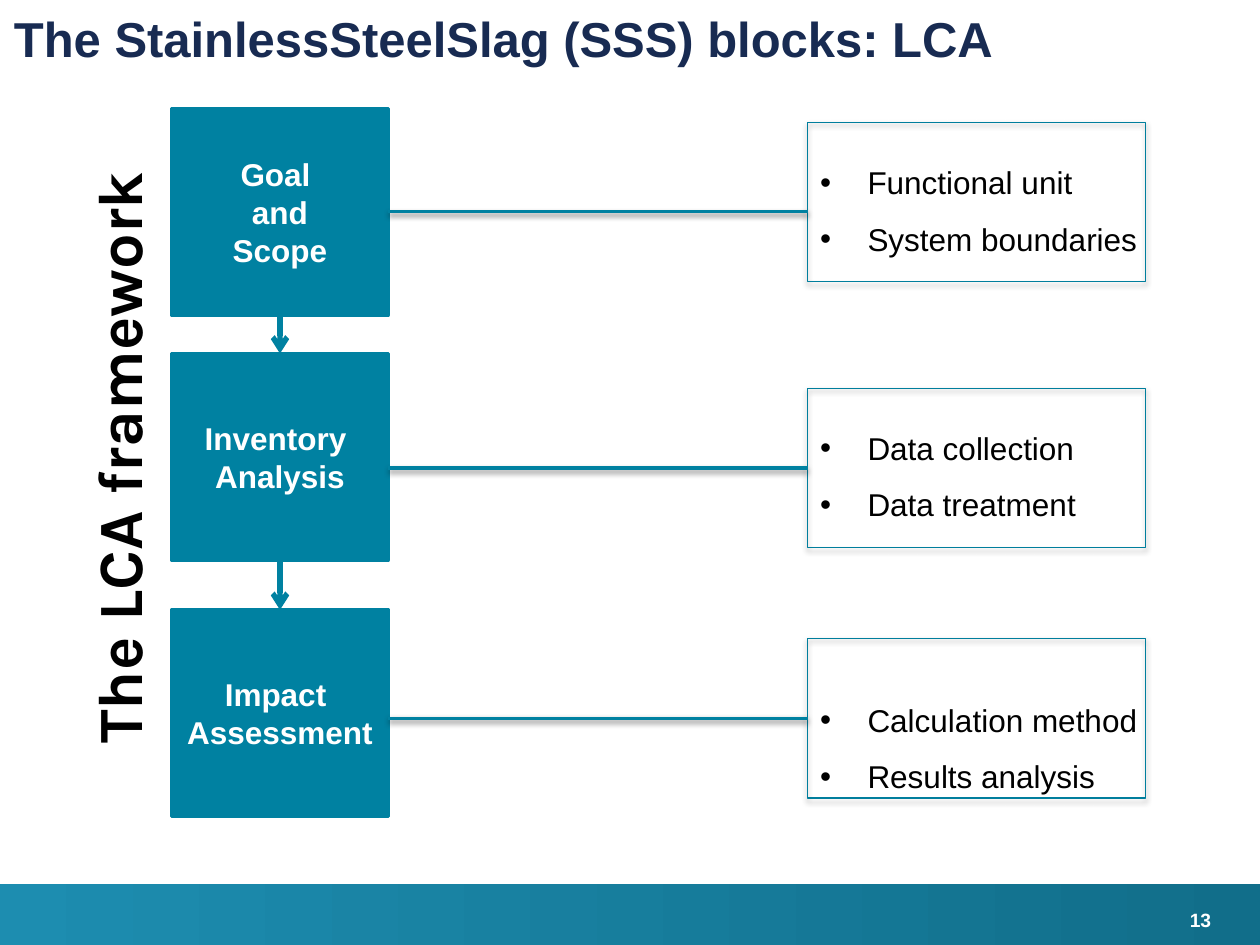
"""Build the slide on the LCA framework for SSS blocks."""
from lxml import etree
from pptx import Presentation
from pptx.dml.color import RGBColor
from pptx.enum import shapes, text
from pptx.oxml import ns
from pptx.util import Pt

TEAL = RGBColor(0x00, 0x81, 0xA1)
EDGE = RGBColor(0x00, 0x7E, 0x9D)
NAVY = RGBColor(0x18, 0x2B, 0x52)
BLACK = RGBColor(0, 0, 0)
WHITE = RGBColor(255, 255, 255)
LIGHT = RGBColor(0x1D, 0x8D, 0xB0)
DARK = RGBColor(0x11, 0x6E, 0x8A)

LEFT, SIDE, TALL = 98, 124, 118
EAST, WIDE, HIGH = 461.5, 193, 91
STEPS = [
    (62, 70, 79, 121, ["Goal ", "and", "Scope"],
     ["Functional unit", "System boundaries"]),
    (202, 222, 230.5, 267.5, ["Inventory ", "Analysis"],
     ["Data collection", "Data treatment"]),
    (348.5, 365, 386, 410.5, ["Impact ", "Assessment"],
     ["Calculation method", "Results analysis"]),
]


def add(parent, tag, **attrs):
    node = etree.SubElement(parent, ns.qn(tag))
    for key, value in attrs.items():
        node.set(key, str(value))
    return node


class Deck:
    def __init__(self, slide, face="Arial"):
        self.slide = slide
        self.face = face

    def place(self, shape, left, top, width, height):
        shape.left, shape.top = Pt(left), Pt(top)
        shape.width, shape.height = Pt(width), Pt(height)

    def letter(self, shape, lines, size, color, bold=True, align=None,
               face=None, bullet=False):
        frame = shape.text_frame
        frame.word_wrap = True
        frame.text = "\n".join(lines)
        for para in frame.paragraphs:
            if bullet:
                props = para._p.get_or_add_pPr()
                props.set("marL", str(Pt(27)))
                props.set("indent", str(Pt(-27)))
                add(props, "a:buFont", typeface="Arial")
                add(props, "a:buChar", char="•")
                para.line_spacing = 1.5
                para.space_before = Pt(0)
            para.alignment = align
            font = para.font
            font.name, font.size, font.bold = face or self.face, Pt(size), bold
            font.color.rgb = color
        return frame

    def title(self, line):
        shape = self.slide.shapes.title
        self.place(shape, 0, 0, 695, 43)
        frame = self.letter(shape, [line], 28, NAVY, align=text.PP_ALIGN.LEFT)
        frame.auto_size = text.MSO_AUTO_SIZE.NONE
        frame.vertical_anchor = text.MSO_ANCHOR.MIDDLE
        frame.margin_left, frame.margin_right = Pt(8), 0

    def points(self, shape, top, lines):
        self.place(shape, EAST, top, 211, 69)
        frame = self.letter(shape, lines, 18, BLACK, bold=False, bullet=True,
                            align=text.PP_ALIGN.LEFT)
        frame.auto_size = text.MSO_AUTO_SIZE.NONE
        frame.vertical_anchor = text.MSO_ANCHOR.TOP

    def label(self, line, area, size, color, face=None, turn=0):
        box = self.slide.shapes.add_textbox(*map(Pt, area))
        box.rotation = turn
        return self.letter(box, [line], size, color, face=face,
                           align=text.PP_ALIGN.CENTER)

    def rect(self, left, top, width, height):
        shape = self.slide.shapes.add_shape(
            shapes.MSO_SHAPE.RECTANGLE, *map(Pt, (left, top, width, height)))
        shape.shadow.inherit = False
        return shape

    def band(self):
        shape = self.rect(0, 505, 720, 35)
        shape.line.fill.background()
        shape.fill.gradient()
        shape.fill.gradient_angle = 0
        for stop, color in zip(shape.fill.gradient_stops, (LIGHT, DARK)):
            stop.color.rgb = color

    def block(self, top, lines):
        shape = self.rect(LEFT, top, SIDE, TALL)
        shape.fill.solid()
        shape.fill.fore_color.rgb = TEAL
        shape.line.color.rgb, shape.line.width = TEAL, Pt(2)
        frame = self.letter(shape, lines, 18, WHITE, align=text.PP_ALIGN.CENTER)
        frame.vertical_anchor = text.MSO_ANCHOR.MIDDLE
        return shape

    def frame(self, top):
        shape = self.rect(EAST, top, WIDE, HIGH)
        shape.fill.background()
        shape.line.color.rgb, shape.line.width = EDGE, Pt(0.75)
        self.shade(shape.element.spPr.find(ns.qn("a:effectLst")), 1.8, 35)
        return shape

    def shade(self, effects, dist, alpha):
        glow = add(effects, "a:outerShdw", blurRad=Pt(3.1), dist=Pt(dist),
                   dir=5400000, rotWithShape=0)
        tone = add(glow, "a:srgbClr", val="000000")
        add(tone, "a:alpha", val=alpha * 1000)

    def line(self, start, end, width):
        line = self.slide.shapes.add_connector(
            shapes.MSO_CONNECTOR.STRAIGHT, *map(Pt, start + end))
        line.line.color.rgb, line.line.width = TEAL, Pt(width)
        return line, add(line.element.spPr, "a:effectLst")

    def link(self, block, frame, y):
        line, effects = self.line((LEFT + SIDE, y), (EAST, y), 2)
        self.shade(effects, 1.6, 38)
        if block.top + block.height // 2 == Pt(y):
            line.begin_connect(block, 3)
        if frame.top + frame.height // 2 == Pt(y):
            line.end_connect(frame, 1)

    def arrow(self, upper, lower):
        line, _ = self.line((0, 0), (0, 0), 3)
        line.begin_connect(upper, 2)
        line.end_connect(lower, 0)
        add(line.element.spPr.find(ns.qn("a:ln")), "a:tailEnd", type="arrow")


def main():
    show = Presentation()
    show.slide_width, show.slide_height = Pt(720), Pt(540)
    slide = show.slides.add_slide(show.slide_layouts[4])
    deck = Deck(slide)
    deck.band()
    deck.title("The StainlessSteelSlag (SSS) blocks: LCA")
    *bodies, spare = list(slide.placeholders)[1:]
    spare.element.getparent().remove(spare.element)

    blocks = []
    for body, (top, edge, head, y, name, items) in zip(bodies, STEPS):
        block = deck.block(top, name)
        deck.link(block, deck.frame(edge), y)
        deck.points(body, head, items)
        blocks.append(block)
    for upper, lower in zip(blocks, blocks[1:]):
        deck.arrow(upper, lower)

    deck.label("The LCA framework", (-126.5, 236, 388, 51), 36, BLACK,
               face="Karla", turn=270)
    page = deck.label("13", (649.5, 519, 73, 21), 11, WHITE)
    page.margin_left = page.margin_right = 0
    page.margin_top = page.margin_bottom = 0
    show.save("out.pptx")


if __name__ == "__main__":
    main()
